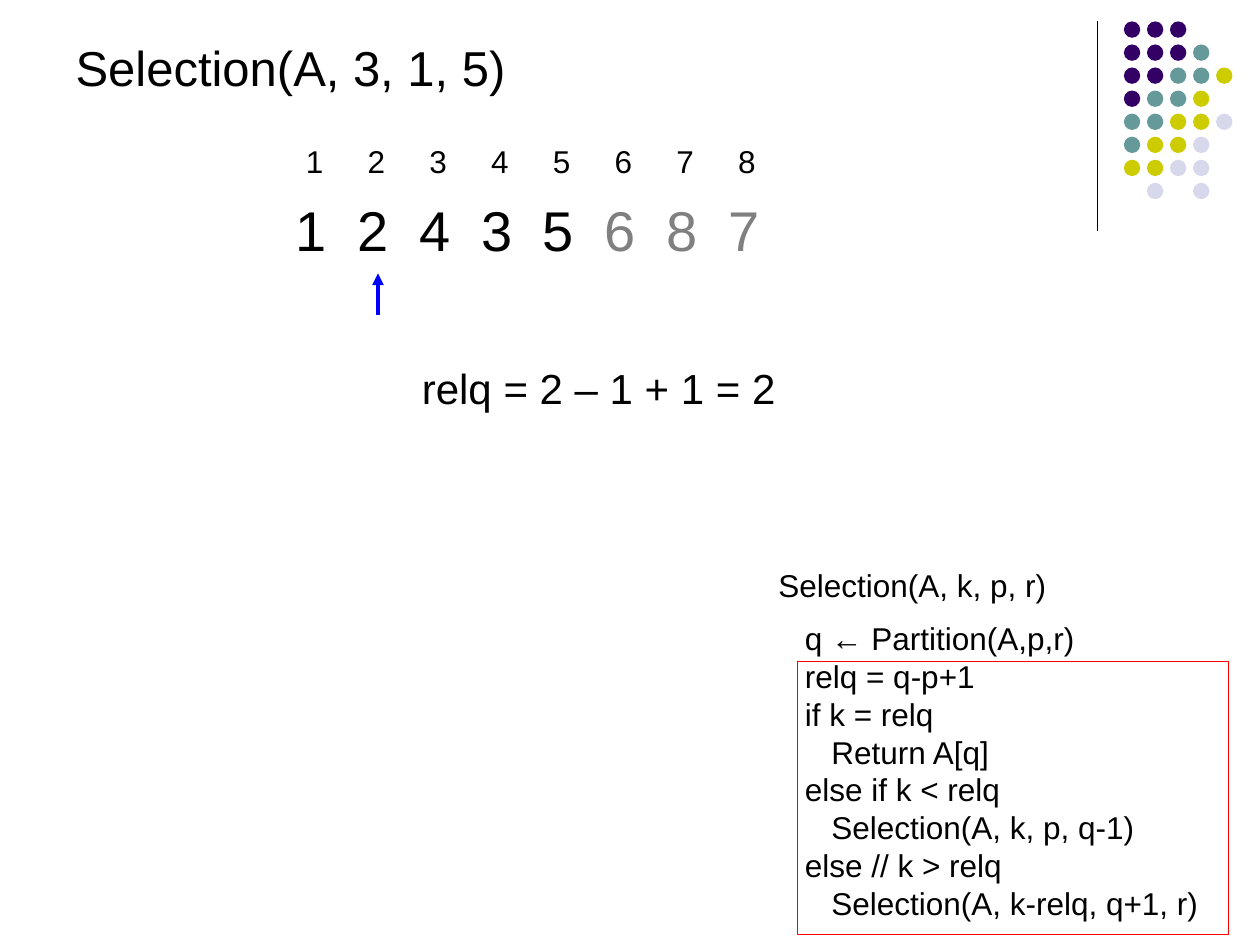
from typing import NamedTuple

from lxml.etree import SubElement
from pptx import Presentation
from pptx.dml.color import RGBColor
from pptx.enum.shapes import MSO_CONNECTOR as CONN, MSO_SHAPE as SHAPE
from pptx.enum.text import MSO_ANCHOR as ANCHOR, MSO_AUTO_SIZE as AUTO, PP_ALIGN as ALIGN
from pptx.oxml.ns import qn
from pptx.util import Inches, Pt

FONT = "Arial"
COLORS = {
    "text": "000000", "muted": "808080", "arrow": "0000FF", "frame": "FF0000",
    "P": "330066", "T": "669999", "Y": "CCCC00", "L": "D8D8EC",
}
# One letter per dot, naming its colour; a blank leaves the cell empty
DOT_ROWS = ["PPP", "PPPT", "PPTTY", "PTTY", "TTYYL", "TYYL", "YYLL", " L L"]
DOT_LEFT, DOT_TOP, DOT_PITCH, DOT_SIZE = 8.92, 0.17, 0.183, 0.13
COLUMN_PITCH = 0.49
CODE_INDENT = 0.21


class Box(NamedTuple):
    left: float
    top: float
    width: float
    height: float


class Line(NamedTuple):
    runs: list[tuple[str, str]]  # text and colour name
    level: int = 0
    before: float = 0


def plain(text: str, level: int = 0, before: float = 0) -> Line:
    return Line([(text, "text")], level, before)


def rgb(name: str) -> RGBColor:
    return RGBColor.from_string(COLORS[name])


def place(sp, box: Box) -> None:
    sp.left, sp.top, sp.width, sp.height = map(Inches, box)


def write_text(sp, lines: list[Line], *, size: float, tabs: int = 0) -> None:
    tf = sp.text_frame
    tf.word_wrap = True
    tf.auto_size = AUTO.NONE
    tf.vertical_anchor = ANCHOR.TOP
    for i, line in enumerate(lines):
        p = tf.add_paragraph() if i else tf.paragraphs[0]
        p.alignment = ALIGN.LEFT
        p.line_spacing = Pt(size * 1.2)
        p.space_before = Pt(line.before)
        pPr = p._p.get_or_add_pPr()
        if line.level:
            pPr.set("marL", str(Inches(CODE_INDENT * line.level)))
            pPr.set("indent", "0")
        if tabs:
            tab_list = SubElement(pPr, qn("a:tabLst"))
            for n in range(1, tabs + 1):
                SubElement(tab_list, qn("a:tab"),
                           pos=str(Inches(COLUMN_PITCH * n)), algn="l")
        for text, color in line.runs:
            r = p.add_run()
            r.text = text
            r.font.name, r.font.size = FONT, Pt(size)
            r.font.color.rgb = rgb(color)


def add_text(s, box: Box, lines: list[Line], *, size: float, tabs: int = 0) -> None:
    sp = s.shapes.add_textbox(*map(Inches, box))
    write_text(sp, lines, size=size, tabs=tabs)


def add_line(s, start: tuple[float, float], end: tuple[float, float], *,
             color: str, width: float, arrow: bool = False) -> None:
    sp = s.shapes.add_connector(CONN.STRAIGHT, *map(Inches, start + end))
    sp.line.color.rgb, sp.line.width = rgb(color), Pt(width)
    if arrow:
        SubElement(sp.line._get_or_add_ln(), qn("a:tailEnd"), type="triangle")
    SubElement(sp._element.spPr, qn("a:effectLst"))


def add_dots(s) -> None:
    group = s.shapes.add_group_shape()
    for row, letters in enumerate(DOT_ROWS):
        for col, letter in enumerate(letters):
            if letter == " ":
                continue
            box = Box(DOT_LEFT + col * DOT_PITCH, DOT_TOP + row * DOT_PITCH,
                      DOT_SIZE, DOT_SIZE)
            sp = group.shapes.add_shape(SHAPE.OVAL, *map(Inches, box))
            sp.shadow.inherit = False
            sp.fill.solid()
            sp.fill.fore_color.rgb = rgb(letter)
            sp.line.fill.background()


def main() -> None:
    prs = Presentation()
    prs.slide_width, prs.slide_height = Inches(10), Inches(7.5)
    s = prs.slides.add_slide(prs.slide_layouts[5])

    # Corner decoration
    add_line(s, (8.71, 0.17), (8.71, 1.83), color="text", width=0.75)
    add_dots(s)

    # Pseudocode, with a frame around the steps after partitioning
    add_text(s, Box(6.08, 4.44, 3.75, 2.98), [
        plain("Selection(A, k, p, r)"),
        plain("q ← Partition(A,p,r)", 1, before=9),
        plain("relq = q-p+1", 1),
        plain("if k = relq", 1),
        plain("Return A[q]", 2),
        plain("else if k < relq", 1),
        plain("Selection(A, k, p, q-1)", 2),
        plain("else // k > relq", 1),
        plain("Selection(A, k-relq, q+1, r)", 2),
    ], size=18)
    frame = s.shapes.add_shape(SHAPE.RECTANGLE, *map(Inches, Box(6.33, 5.25, 3.42, 2.17)))
    frame.shadow.inherit = False
    frame.fill.background()
    frame.line.color.rgb, frame.line.width = rgb("frame"), Pt(0.75)

    # Title
    title = s.shapes.title
    place(title, Box(0.5, 0.25, 6.42, 0.57))
    write_text(title, [plain("Selection(A, 3, 1, 5)")], size=28)

    # Array: indices, values and the pivot arrow
    add_text(s, Box(2.33, 1.08, 4.17, 0.4),
             [plain("\t".join("12345678"))], size=18, tabs=7)
    values = Line([("\t".join("12435") + "\t", "text"), ("\t".join("687"), "muted")])
    add_text(s, Box(2.25, 1.5, 4.58, 0.63), [values], size=32, tabs=7)
    add_line(s, (3, 2.5), (3, 2.17), color="arrow", width=2.25, arrow=True)

    # Relative rank of the pivot
    add_text(s, Box(3.25, 2.83, 3.83, 0.51), [plain("relq = 2 – 1 + 1 = 2")], size=24)

    prs.save("out.pptx")


if __name__ == "__main__":
    main()
